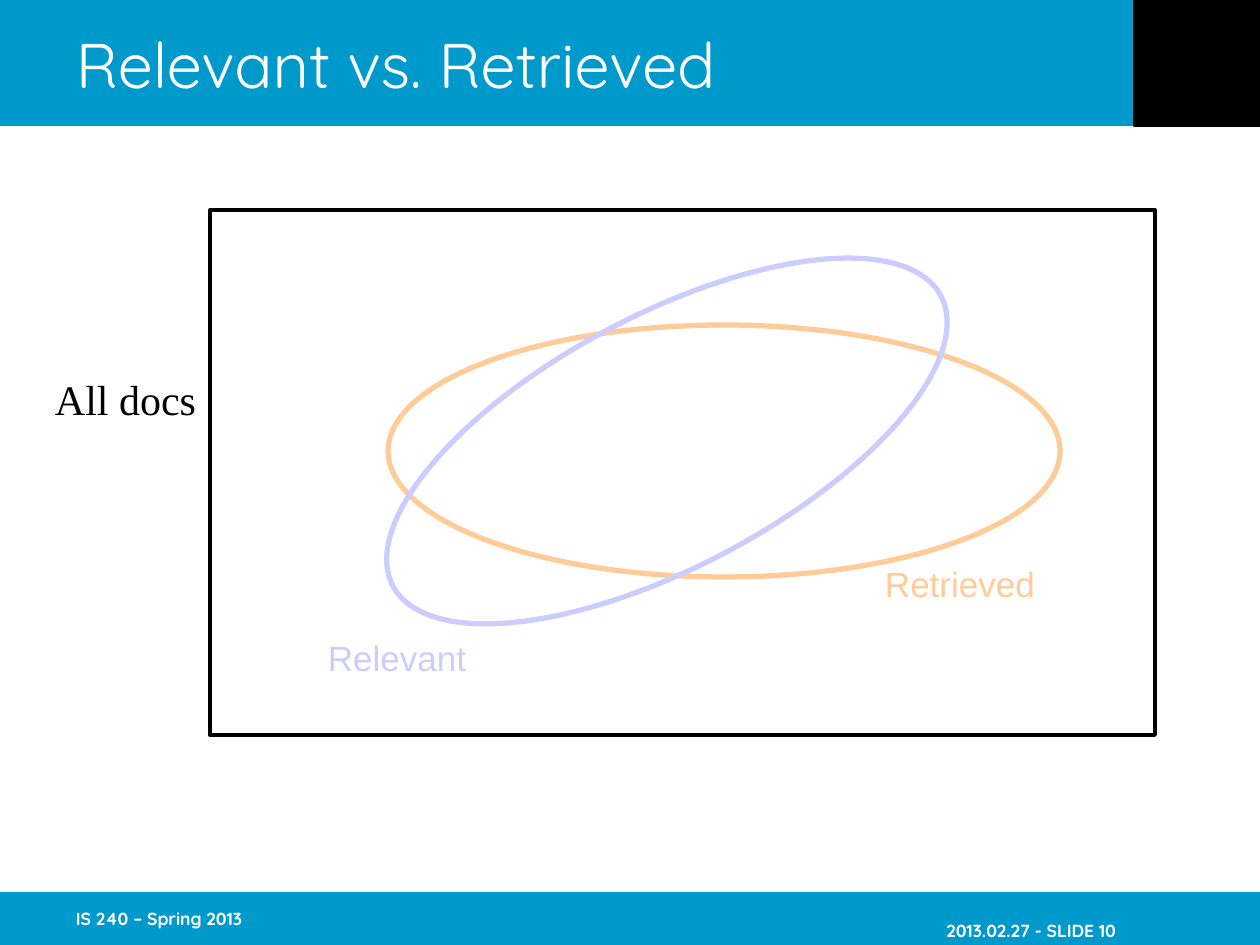
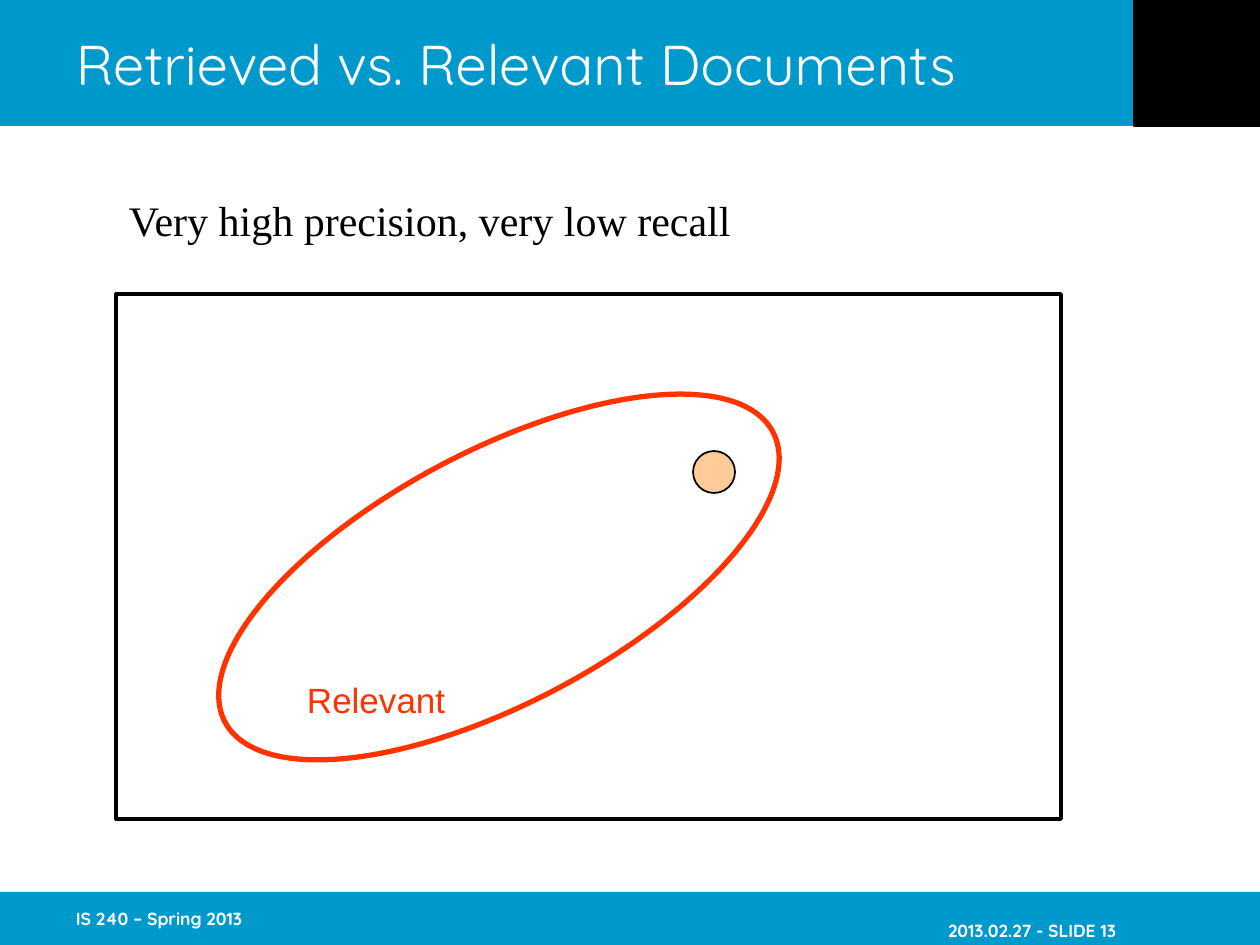
"""Build two slides that compare relevant and retrieved documents."""
from pptx import Presentation
from pptx.dml.color import RGBColor
from pptx.enum.shapes import MSO_SHAPE
from pptx.enum.text import MSO_ANCHOR, MSO_AUTO_SIZE, PP_ALIGN
from pptx.util import Emu, Pt

RECT, OVAL = MSO_SHAPE.RECTANGLE, MSO_SHAPE.OVAL
TOP, MIDDLE = MSO_ANCHOR.TOP, MSO_ANCHOR.MIDDLE
LEFT, RIGHT = PP_ALIGN.LEFT, PP_ALIGN.RIGHT
FIXED = MSO_AUTO_SIZE.NONE

BLUE = RGBColor(0x00, 0x99, 0xCC)
BLACK = RGBColor(0x00, 0x00, 0x00)
WHITE = RGBColor(0xFF, 0xFF, 0xFF)
PEACH = RGBColor(0xFF, 0xCC, 0x99)
LILAC = RGBColor(0xCC, 0xCC, 0xFF)
RED = RGBColor(0xFF, 0x33, 0x00)

HEAD, SANS, SERIF = "Quicksand", "Arial", "Times New Roman"
SCALE = 914400 / 126
WIDE, HIGH = 1260, 945
BAND, FOOT = 126, 892
TILT = 332.1


def draw(slide, kind, area, fill=None, line=None, width=1, turn=0):
    shape = slide.shapes.add_shape(kind, *[Emu(round(n * SCALE)) for n in area])
    shape.shadow.inherit = False
    shape.rotation = turn
    if fill is None:
        shape.fill.background()
    else:
        shape.fill.solid()
        shape.fill.fore_color.rgb = fill
    if line is None:
        shape.line.fill.background()
    else:
        shape.line.color.rgb = line
        shape.line.width = Pt(width)
    return shape


def write(slide, text, area, box=None, font=SANS, size=20, color=BLACK, bold=False,
          align=LEFT, anchor=TOP, wrap=False, inset=(13, 6, 13, 6)):
    spot = [Emu(round(n * SCALE)) for n in area]
    if box is None:
        box = slide.shapes.add_textbox(*spot)
    else:
        box.left, box.top, box.width, box.height = spot
    frame = box.text_frame
    frame.text = text
    frame.word_wrap = wrap
    frame.auto_size = FIXED
    frame.vertical_anchor = anchor
    edges = [Emu(round(n * SCALE)) for n in inset]
    frame.margin_left, frame.margin_top, frame.margin_right, frame.margin_bottom = edges
    para = frame.paragraphs[0]
    para.alignment = align
    face = para.runs[0].font
    face.name, face.size, face.bold = font, Pt(size), bold
    face.color.rgb = color


deck = Presentation()
deck.slide_width, deck.slide_height = Emu(round(WIDE * SCALE)), Emu(round(HIGH * SCALE))

pages = []
for title, size, number in [
    ("Relevant vs. Retrieved", 36, 10),
    ("Retrieved vs. Relevant Documents", 32, 13),
]:
    slide = deck.slides.add_slide(deck.slide_layouts[5])
    draw(slide, RECT, (0, 0, WIDE, BAND), fill=BLUE)
    draw(slide, RECT, (0, FOOT, WIDE, HIGH - FOOT), fill=BLUE)
    block = draw(slide, RECT, (WIDE - BAND, 0, BAND, BAND), fill=BLACK, line=BLACK, width=0.75)
    head = slide.shapes.title
    block.element.addnext(head.element)
    write(slide, title, (63, 0, 1071, BAND), box=head, font=HEAD, size=size,
          color=WHITE, anchor=MIDDLE, wrap=True)
    for note, left, align, inset in [
        ("IS 240 – Spring 2013", 63, LEFT, (13, 6, 0, 6)),
        (f"2013.02.27 - SLIDE {number}", 935, RIGHT, (13, 24, 81, 0)),
    ]:
        write(slide, note, (left, FOOT, 262, HIGH - FOOT), font=HEAD, size=10, color=WHITE,
              bold=True, align=align, anchor=MIDDLE, inset=inset)
    pages.append(slide)

venn, narrow = pages

draw(venn, OVAL, (388, 325, 672, 252), line=PEACH, width=3)
draw(venn, OVAL, (357, 315, 620, 252), line=LILAC, width=3, turn=TILT)
write(venn, "Relevant", (315, 630, 164, 54), color=LILAC)
write(venn, "Retrieved", (872, 556, 218, 54), color=PEACH, wrap=True)
draw(venn, RECT, (210, 210, 945, 525), line=BLACK, width=2.25)
write(venn, "All docs", (42, 368, 166, 63), font=SERIF, size=24)

draw(narrow, OVAL, (189, 451, 620, 252), line=RED, width=3, turn=TILT)
write(narrow, "Relevant", (294, 672, 164, 54), color=RED)
draw(narrow, OVAL, (693, 451, 42, 42), fill=PEACH, line=BLACK)
write(narrow, "Very high precision, very low recall", (116, 189, 631, 63), font=SERIF, size=24)
draw(narrow, RECT, (116, 294, 945, 525), line=BLACK, width=2.25)

deck.save("out.pptx")
